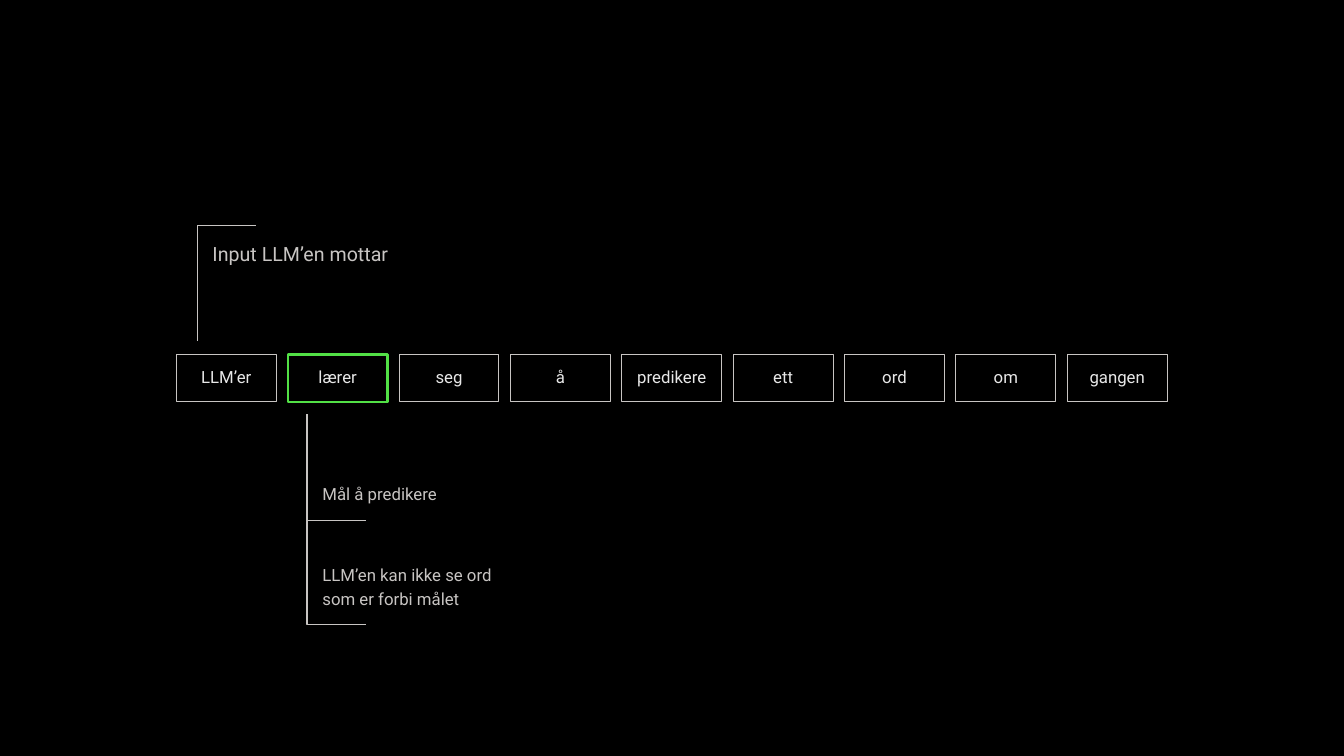
import pptx
import pptx.dml.color
import pptx.enum.shapes
import pptx.enum.text
import pptx.util

Pt = pptx.util.Pt
ANCHOR = pptx.enum.text.MSO_ANCHOR
ALIGN = pptx.enum.text.PP_ALIGN

BLACK = "000000"
GREY = "C8C5C3"
LIGHT = "E8E8E8"
GREEN = "52E046"

WORDS = ["LLM’er", "lærer", "seg", "å", "predikere", "ett", "ord", "om", "gangen"]
TARGET = "lærer"
WORD_LEFT, WORD_TOP = 126, 253.4
WORD_WIDTH, WORD_HEIGHT = 71.3, 33.8
WORD_PITCH = 79.55
ARM = 42


def color(hex_string):
    return pptx.dml.color.RGBColor.from_string(hex_string)


def set_text(shape, text, size, text_color, anchor, alignment, spacing):
    frame = shape.text_frame
    frame.word_wrap = True
    frame.vertical_anchor = anchor
    paragraph = frame.paragraphs[0]
    paragraph.text = text
    paragraph.alignment = alignment
    paragraph.line_spacing = spacing
    paragraph.font.name = "Roboto"
    paragraph.font.size = Pt(size)
    paragraph.font.color.rgb = color(text_color)


def style_outline(shape, line_color, width):
    shape.shadow.inherit = False
    shape.fill.background()
    shape.line.color.rgb = color(line_color)
    shape.line.width = Pt(width)


def add_word(slide, index, word):
    shape = slide.shapes.add_shape(
        pptx.enum.shapes.MSO_SHAPE.RECTANGLE,
        Pt(WORD_LEFT + index * WORD_PITCH), Pt(WORD_TOP),
        Pt(WORD_WIDTH), Pt(WORD_HEIGHT))
    if word == TARGET:
        style_outline(shape, GREEN, 1.75)
    else:
        style_outline(shape, GREY, 0)
    set_text(shape, word, 12, LIGHT, ANCHOR.MIDDLE, ALIGN.CENTER, 0.9)


def add_label(slide, text, left, top, width, height, size, anchor):
    box = slide.shapes.add_textbox(Pt(left), Pt(top), Pt(width), Pt(height))
    set_text(box, text, size, GREY, anchor, ALIGN.LEFT, 1.2)


def add_bracket(slide, left, start, corner):
    """Draw a vertical stem from start to corner, then an arm to the right."""
    builder = slide.shapes.build_freeform(Pt(left), Pt(start))
    builder.add_line_segments(
        [(Pt(left), Pt(corner)), (Pt(left + ARM), Pt(corner))], close=False)
    style_outline(builder.convert_to_shape(), GREY, 1)


def main():
    presentation = pptx.Presentation()
    presentation.slide_width = Pt(960)
    presentation.slide_height = Pt(540)
    slide = presentation.slides.add_slide(presentation.slide_layouts[6])
    slide.background.fill.solid()
    slide.background.fill.fore_color.rgb = color(BLACK)

    # Sentence, one box per word
    for index, word in enumerate(WORDS):
        add_word(slide, index, word)

    # Notes below the target word
    add_label(slide, "Mål å predikere", 223.2, 329.8, 131, 33.8, 12, ANCHOR.BOTTOM)
    add_bracket(slide, 219.4, 295.9, 371.8)
    add_label(slide, "LLM’en kan ikke se ord som er forbi målet",
              223.2, 383, 144, 55.4, 12, ANCHOR.BOTTOM)
    add_bracket(slide, 219.4, 370.1, 446)

    # Note above the input word
    add_label(slide, "Input LLM’en mottar", 144.7, 165.6, 167.8, 48.2, 14, ANCHOR.TOP)
    add_bracket(slide, 141.1, 243.4, 161.1)

    presentation.save("out.pptx")


if __name__ == "__main__":
    main()
